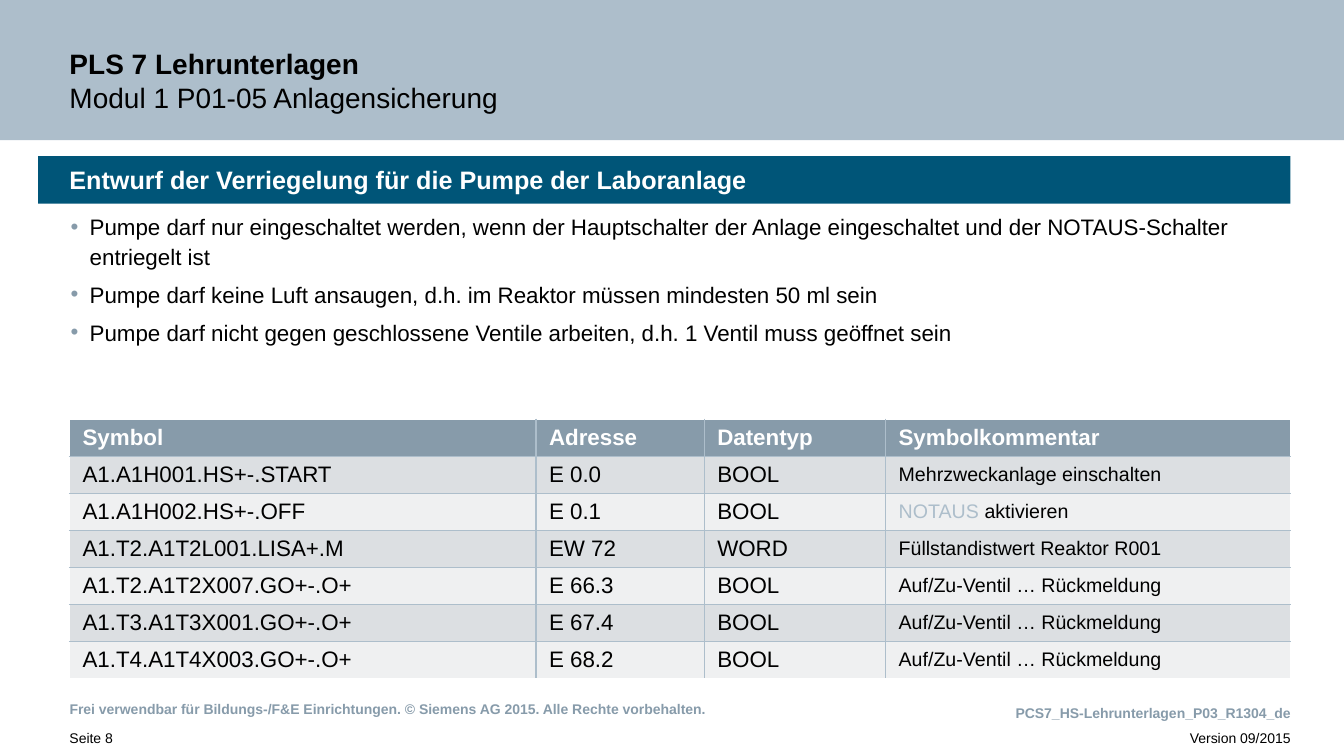
from lxml import etree
from pptx import Presentation
from pptx.dml.color import RGBColor
from pptx.enum.shapes import MSO_SHAPE
from pptx.enum.text import MSO_ANCHOR, PP_ALIGN
from pptx.oxml.ns import qn
from pptx.util import Inches, Pt

RECT = MSO_SHAPE.RECTANGLE
TOP, MIDDLE, BOTTOM = MSO_ANCHOR.TOP, MSO_ANCHOR.MIDDLE, MSO_ANCHOR.BOTTOM
LEFT, RIGHT = PP_ALIGN.LEFT, PP_ALIGN.RIGHT
COLORS = {"band": "ADBECB", "accent": "879BAA", "bar": "005578", "black": "000000",
          "white": "FFFFFF", "odd": "DCDFE2", "even": "EFF0F1"}
FONT = "Arial"
COLS, ROWS = 133.4, 75
MARGIN, RIGHT_EDGE = 6.9, 128.1

BULLETS = [
    "Pumpe darf nur eingeschaltet werden, wenn der Hauptschalter der Anlage "
    "eingeschaltet und der NOTAUS-Schalter entriegelt ist",
    "Pumpe darf keine Luft ansaugen, d.h. im Reaktor müssen mindesten 50 ml sein",
    "Pumpe darf nicht gegen geschlossene Ventile arbeiten, d.h. 1 Ventil muss geöffnet sein",
]
HEADER = ["Symbol", "Adresse", "Datentyp", "Symbolkommentar"]
VALVE = [("Auf/Zu-Ventil … Rückmeldung", "black")]
SIGNALS = [
    ("A1.A1H001.HS+-.START", "E 0.0", "BOOL", [("Mehrzweckanlage einschalten", "black")]),
    ("A1.A1H002.HS+-.OFF", "E 0.1", "BOOL", [("NOTAUS ", "band"), ("aktivieren", "black")]),
    ("A1.T2.A1T2L001.LISA+.M", "EW 72", "WORD", [("Füllstandistwert Reaktor R001", "black")]),
    ("A1.T2.A1T2X007.GO+-.O+", "E 66.3", "BOOL", VALVE),
    ("A1.T3.A1T3X001.GO+-.O+", "E 67.4", "BOOL", VALVE),
    ("A1.T4.A1T4X003.GO+-.O+", "E 68.2", "BOOL", VALVE),
]
COL_SHARES = [4.63, 1.67, 1.8, 4.02]


def grid(n):
    """Length of n grid units, each a tenth of an inch."""
    return Inches(n / 10)


def rgb(name):
    """Colour object for a palette name."""
    return RGBColor.from_string(COLORS[name])


def add_run(p, text, size, color="black", bold=False):
    """Append a formatted run to a paragraph."""
    r = p.add_run()
    r.text = text
    r.font.name, r.font.size, r.font.bold = FONT, Pt(size), bold
    r.font.color.rgb = rgb(color)


def set_frame(tf, anchor=TOP, insets=(0, 0, 0, 0)):
    """Set wrapping, anchor and insets of a text frame."""
    tf.word_wrap = True
    tf.vertical_anchor = anchor
    tf.margin_left, tf.margin_top, tf.margin_right, tf.margin_bottom = map(grid, insets)
    return tf


def add_box(s, box, fill):
    """Draw a filled rectangle without outline."""
    sp = s.shapes.add_shape(RECT, *map(grid, box))
    sp.shadow.inherit = False
    sp.fill.solid()
    sp.fill.fore_color.rgb = rgb(fill)
    sp.line.fill.background()
    return sp


def add_line(s, box, text, size, color="black", bold=False, align=LEFT, anchor=TOP):
    """Place a one-line text box."""
    tf = set_frame(s.shapes.add_textbox(*map(grid, box)).text_frame, anchor)
    p = tf.paragraphs[0]
    p.alignment, p.line_spacing = align, 1.1
    add_run(p, text, size, color, bold)


def add_title(s, box):
    """Draw the title band with its two lines."""
    sp = add_box(s, box, "band")
    p = set_frame(sp.text_frame, BOTTOM, (MARGIN, 4.3, 23.2, 2.6)).paragraphs[0]
    p.alignment = LEFT
    add_run(p, "PLS 7 Lehrunterlagen", 20, bold=True)
    p.add_line_break()
    add_run(p, "Modul 1 P01-05 Anlagensicherung", 20)


def add_heading(s, box):
    """Draw the section bar."""
    sp = add_box(s, box, "bar")
    p = set_frame(sp.text_frame, MIDDLE, (MARGIN - box[0], 0, 0.8, 0)).paragraphs[0]
    p.alignment = LEFT
    add_run(p, "Entwurf der Verriegelung für die Pumpe der Laboranlage", 18, "white", True)


def add_bullets(s, box):
    """Write the bulleted conditions."""
    tf = set_frame(s.shapes.add_textbox(*map(grid, box)).text_frame)
    for i, text in enumerate(BULLETS):
        p = tf.add_paragraph() if i else tf.paragraphs[0]
        p.line_spacing, p.space_before = 1.1, Pt(6 if i else 0)
        pPr = p._p.get_or_add_pPr()
        pPr.set("marL", str(grid(2)))
        pPr.set("indent", str(-grid(1.9)))
        clr = etree.SubElement(pPr, qn("a:buClr"))
        etree.SubElement(clr, qn("a:srgbClr"), val=COLORS["accent"])
        etree.SubElement(pPr, qn("a:buFont"), typeface=FONT)
        etree.SubElement(pPr, qn("a:buChar"), char="•")
        add_run(p, text, 16)


def style_cell(cell, fill, sides):
    """Give a cell its insets, inner borders and fill."""
    cell.vertical_anchor = MIDDLE
    cell.margin_left = cell.margin_right = grid(1.3)
    cell.margin_top = cell.margin_bottom = grid(0.5)
    tcPr = cell._tc.get_or_add_tcPr()
    for side in sides:
        ln = etree.SubElement(tcPr, qn(f"a:ln{side}"), w=str(Pt(1)))
        solid = etree.SubElement(ln, qn("a:solidFill"))
        etree.SubElement(solid, qn("a:srgbClr"), val=COLORS["band"])
    cell.fill.solid()
    cell.fill.fore_color.rgb = rgb(fill)


def add_signals(s, box):
    """Build the table of signals."""
    n_rows, n_cols = len(SIGNALS) + 1, len(HEADER)
    table = s.shapes.add_table(n_rows, n_cols, *map(grid, box)).table
    for col, share in zip(table.columns, COL_SHARES):
        col.width = grid(box[2] * share / sum(COL_SHARES))
    for i, row in enumerate([HEADER] + SIGNALS):
        table.rows[i].height = grid(box[3] / n_rows)
        fill = ("odd" if i % 2 else "even") if i else "accent"
        for j, value in enumerate(row):
            inner = {"L": j > 0, "R": j < n_cols - 1, "T": i > 0, "B": i < n_rows - 1}
            cell = table.cell(i, j)
            style_cell(cell, fill, [side for side, shown in inner.items() if shown])
            runs = [(value, "black" if i else "white")] if isinstance(value, str) else value
            size = 14 if i and j == n_cols - 1 else 16
            for text, color in runs:
                add_run(cell.text_frame.paragraphs[0], text, size, color, not i)


def add_footer(s, box):
    """Write the four footer lines at the two edges of the box."""
    x, y, w, h = box
    half = w / 2
    add_line(s, (x, y, w * 0.7, h * 0.4),
             "Frei verwendbar für Bildungs-/F&E Einrichtungen. © Siemens AG 2015. "
             "Alle Rechte vorbehalten.", 10, "accent", True, anchor=MIDDLE)
    add_line(s, (x + half, y + 0.7, half, 1.7),
             "PCS7_HS-Lehrunterlagen_P03_R1304_de", 10, "accent", True, RIGHT)
    add_line(s, (x, y + 3.2, half, 2.8), "Seite 8", 10)
    add_line(s, (x + half, y + 3.2, half, 2.8), "Version 09/2015", 10, align=RIGHT)


def main():
    """Build and save the slide."""
    prs = Presentation()
    prs.slide_width, prs.slide_height = grid(COLS), grid(ROWS)
    s = prs.slides.add_slide(prs.slide_layouts[6])
    width = RIGHT_EDGE - MARGIN
    add_title(s, (0, 0, COLS, 13.9))
    add_heading(s, (3.8, 15.5, RIGHT_EDGE - 3.8, 4.7))
    add_bullets(s, (MARGIN, 20.9, width, 14))
    add_signals(s, (MARGIN, 41.6, width, 24.6))
    add_footer(s, (MARGIN, 69, width, 6))
    prs.save("out.pptx")


if __name__ == "__main__":
    main()
